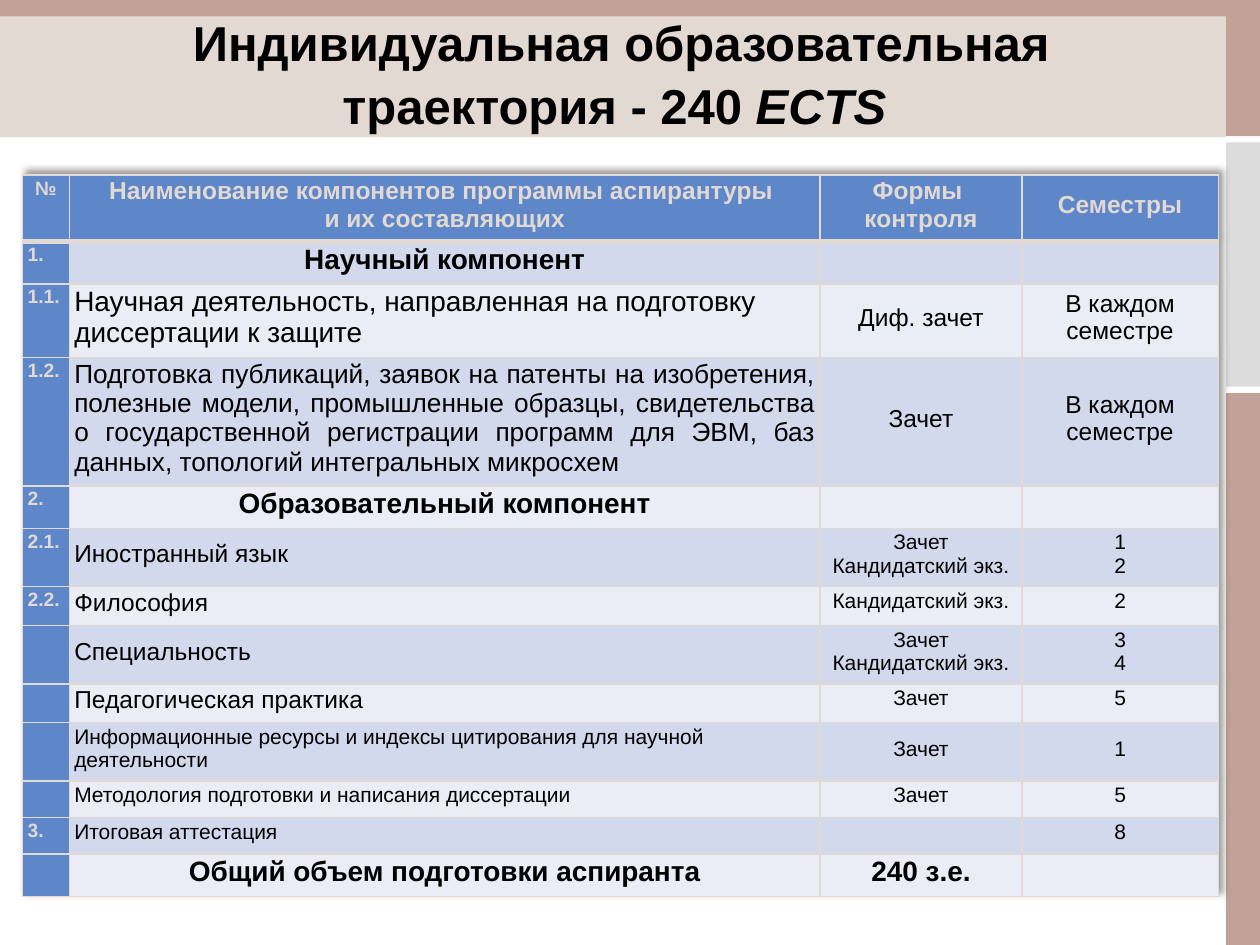
from dataclasses import dataclass
from typing import Any

from lxml.etree import SubElement
from pptx import Presentation
from pptx.dml.color import RGBColor
from pptx.enum.shapes import MSO_SHAPE as SHAPE
from pptx.enum.text import MSO_ANCHOR as ANCHOR, MSO_AUTO_SIZE as AUTO, PP_ALIGN as ALIGN
from pptx.oxml.ns import qn
from pptx.util import Inches, Pt

BLACK = RGBColor(0x00, 0x00, 0x00)
ROSE = RGBColor(0xC2, 0xA2, 0x98)
SAND = RGBColor(0xE3, 0xD9, 0xD3)
GRAY = RGBColor(0xDC, 0xDC, 0xDC)
BLUE = RGBColor(0x5E, 0x87, 0xCA)
ROW_FILLS = (RGBColor(0xEA, 0xED, 0xF6), RGBColor(0xD2, 0xD9, 0xEC))

TOP, MID = ANCHOR.TOP, ANCHOR.MIDDLE
LEFT, CENTER, JUST = ALIGN.LEFT, ALIGN.CENTER, ALIGN.JUSTIFY

COLUMN_WIDTHS = (0.37, 5.96, 1.6, 1.56)
HEADER_HEIGHT = 0.52
HEADER = [
    ("№", 11, TOP),
    ("Наименование компонентов программы аспирантуры \nи их составляющих", 14, TOP),
    ("Формы \nконтроля", 14, TOP),
    ("Семестры", 14, MID),
]

# height, number, (name, size, align, anchor), (control, semesters, size, anchor)
# Names of 16 pt that are centred are section headings and are set in bold
ROWS = [
    (0.33, "1.", ("Научный компонент", 16, CENTER, TOP), ("", "", 12, TOP)),
    (0.58, "1.1.",
     ("Научная деятельность, направленная на подготовку диссертации к защите",
      16, LEFT, TOP),
     ("Диф. зачет", "В каждом семестре", 14, MID)),
    (1.02, "1.2.",
     ("Подготовка публикаций, заявок на патенты на изобретения, полезные модели, "
      "промышленные образцы, свидетельства о государственной регистрации программ "
      "для ЭВМ, баз данных, топологий интегральных микросхем", 15, JUST, TOP),
     ("Зачет", "В каждом семестре", 14, MID)),
    (0.32, "2.", ("Образовательный компонент", 16, CENTER, TOP), ("", "", 12, TOP)),
    (0.46, "2.1.", ("Иностранный язык", 14, LEFT, MID),
     ("Зачет\nКандидатский экз.", "1\n2", 12, TOP)),
    (0.3, "2.2.", ("Философия", 14, JUST, MID), ("Кандидатский экз.", "2", 12, TOP)),
    (0.46, "", ("Специальность", 14, JUST, MID),
     ("Зачет Кандидатский экз.", "3\n4", 12, TOP)),
    (0.3, "", ("Педагогическая практика", 14, JUST, TOP), ("Зачет", "5", 12, TOP)),
    (0.46, "",
     ("Информационные ресурсы и индексы цитирования для научной деятельности",
      12, LEFT, TOP),
     ("Зачет", "1", 12, MID)),
    (0.29, "", ("Методология подготовки и написания диссертации", 12, JUST, TOP),
     ("Зачет", "5", 12, TOP)),
    (0.29, "3.", ("Итоговая аттестация", 12, JUST, TOP), ("", "8", 12, TOP)),
    (0.33, "", ("Общий объем подготовки аспиранта", 16, CENTER, TOP),
     ("240 з.е.", "", 16, TOP)),
]


@dataclass
class Deck:
    slide: Any
    font: str = "Arial"

    def band(self, x, y, w, h, color):
        s = self.slide.shapes.add_shape(
            SHAPE.RECTANGLE, Inches(x), Inches(y), Inches(w), Inches(h))
        s.shadow.inherit = False
        s.fill.solid()
        s.fill.fore_color.rgb = color
        s.line.fill.background()

    def style(self, p, size, color, bold, align):
        p.alignment = align
        p.font.name = self.font
        p.font.size = Pt(size)
        p.font.bold = bold
        p.font.color.rgb = color

    def title(self, x, y, w, h, text, italic_text):
        s = self.slide.shapes.title
        s.left, s.top, s.width, s.height = Inches(x), Inches(y), Inches(w), Inches(h)
        s._element.getparent().append(s._element)  # in front of the bands
        tf = s.text_frame
        tf.auto_size = AUTO.NONE
        tf.vertical_anchor = MID
        p = tf.paragraphs[0]
        p.line_spacing = 1.07
        self.style(p, 28, BLACK, True, CENTER)
        p.add_run().text = text
        r = p.add_run()
        r.text = italic_text
        r.font.italic = True

    def table(self, x, y, widths, heights):
        s = self.slide.shapes.add_table(
            len(heights), len(widths), Inches(x), Inches(y),
            Inches(sum(widths)), Inches(sum(heights)))
        tbl = s.table
        for column, w in zip(tbl.columns, widths):
            column.width = Inches(w)
        for row, h in zip(tbl.rows, heights):
            row.height = Inches(h)
        self.table_shadow(tbl)
        return tbl

    def table_shadow(self, tbl):
        effects = SubElement(tbl._tbl.tblPr, qn("a:effectLst"))
        tbl._tbl.tblPr.insert(0, effects)
        shadow = SubElement(effects, qn("a:outerShdw"), blurRad=str(Pt(4)),
                            dist=str(Pt(3)), dir="18900000", algn="bl", rotWithShape="0")
        color = SubElement(shadow, qn("a:srgbClr"), val=str(BLACK))
        SubElement(color, qn("a:alpha"), val="40000")

    def borders(self, cell, bottom):
        props = cell._tc.get_or_add_tcPr()
        for side, width in (("L", 1), ("R", 1), ("T", 1), ("B", bottom)):
            line = SubElement(props, qn("a:ln" + side), w=str(Pt(width)))
            fill = SubElement(line, qn("a:solidFill"))
            SubElement(fill, qn("a:srgbClr"), val=str(SAND))

    def cell(self, cell, text, size, fill, color=BLACK, bold=False,
             align=CENTER, anchor=TOP, bottom=1):
        self.borders(cell, bottom)
        cell.fill.solid()
        cell.fill.fore_color.rgb = fill
        cell.margin_left = cell.margin_right = Inches(0.04)
        cell.margin_top, cell.margin_bottom = Inches(0.02), Inches(0.07)
        cell.vertical_anchor = anchor
        tf = cell.text_frame
        tf.text = text
        for p in tf.paragraphs:
            self.style(p, size, color, bold, align)
            if not text:  # keeps empty cells from stretching the row
                SubElement(p._p, qn("a:endParaRPr"), sz=str(size * 100))


def main():
    prs = Presentation()
    prs.slide_width, prs.slide_height = Inches(10), Inches(7.5)
    deck = Deck(prs.slides.add_slide(prs.slide_layouts[5]))

    # Background bands
    deck.band(9.73, 1.13, 0.27, 1.94, GRAY)
    deck.band(9.73, 3.12, 0.27, 4.38, ROSE)
    deck.band(0, 0, 10, 1.08, ROSE)
    deck.band(0, 0.13, 9.73, 0.96, SAND)

    # Title
    deck.title(0.43, 0.13, 9, 0.87,
               "Индивидуальная образовательная траектория - 240 ", "ECTS ")

    # Programme table: header, then body rows
    tbl = deck.table(0.18, 1.39, COLUMN_WIDTHS, [HEADER_HEIGHT] + [row[0] for row in ROWS])
    for col, (text, size, anchor) in enumerate(HEADER):
        deck.cell(tbl.cell(0, col), text, size, BLUE, SAND, True, anchor=anchor, bottom=3)
    for i, (_, number, name, results) in enumerate(ROWS, 1):
        fill = ROW_FILLS[i % 2]
        text, size, align, anchor = name
        heading = size == 16 and align == CENTER
        deck.cell(tbl.cell(i, 0), number, 11, BLUE, SAND, True, LEFT)
        deck.cell(tbl.cell(i, 1), text, size, fill, BLACK, heading, align, anchor)
        *values, size, anchor = results
        for col, value in enumerate(values, 2):
            deck.cell(tbl.cell(i, col), value, size, fill, bold=heading, anchor=anchor)

    prs.save("out.pptx")


if __name__ == "__main__":
    main()
